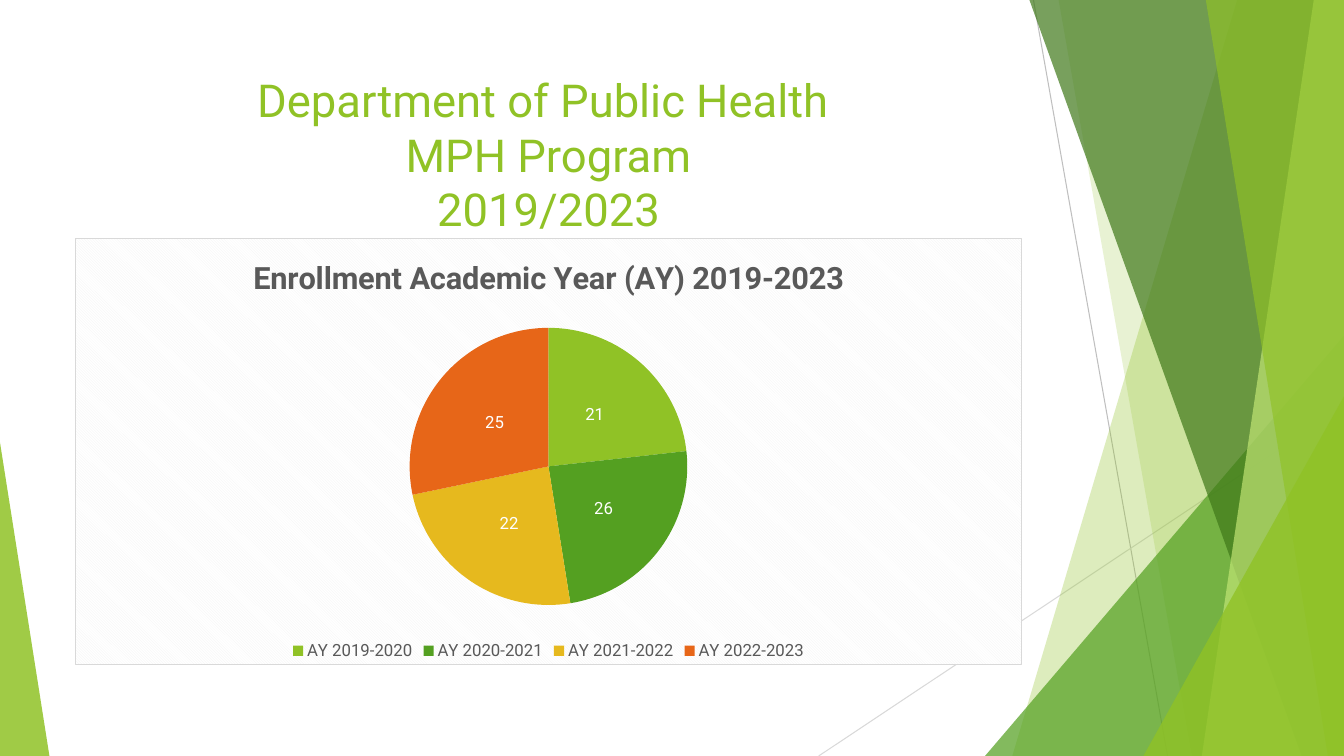
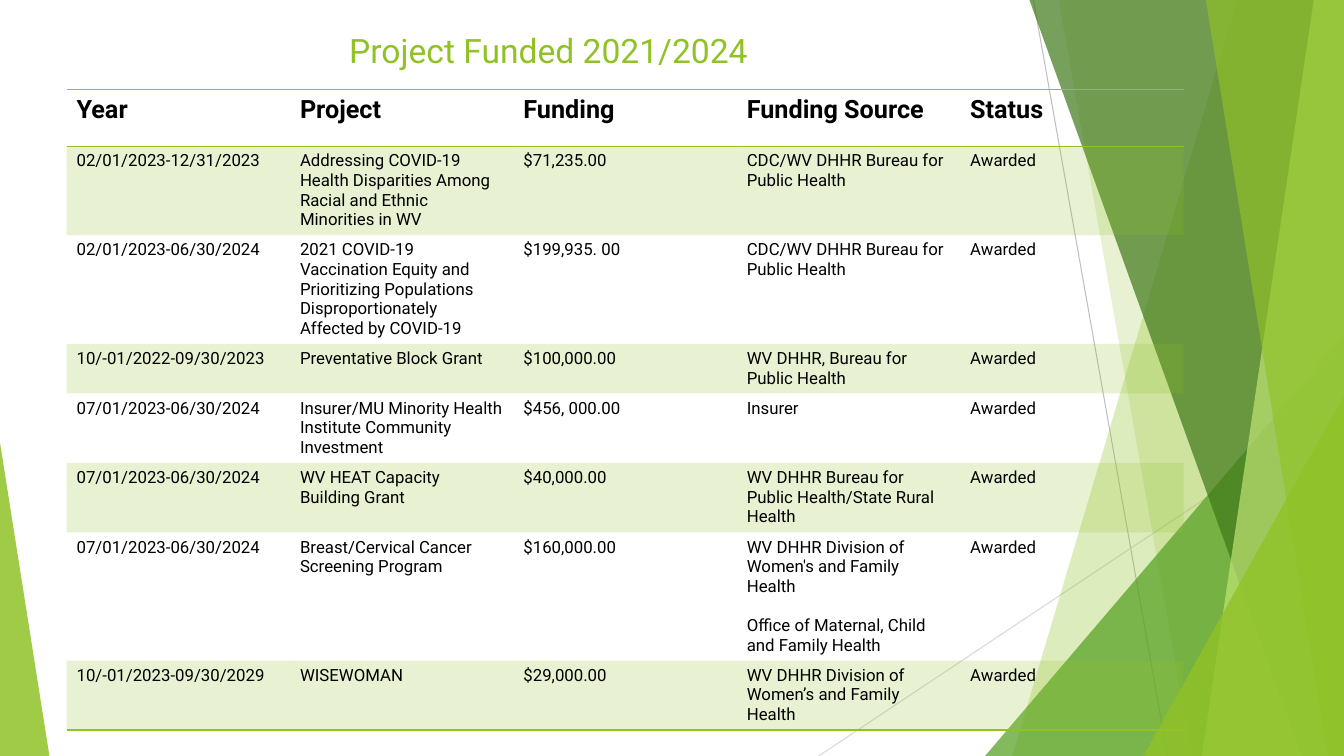
import lxml.etree
import pptx
import pptx.chart.data
import pptx.dml.color
import pptx.enum.chart
import pptx.enum.shapes
import pptx.enum.text
import pptx.oxml
import pptx.oxml.ns
import pptx.util

Inches = pptx.util.Inches
Pt = pptx.util.Pt
RGBColor = pptx.dml.color.RGBColor
qn = pptx.oxml.ns.qn

LIME = RGBColor(0x90, 0xC2, 0x26)
GREEN = RGBColor(0x54, 0xA0, 0x21)
FOREST = RGBColor(0x3F, 0x78, 0x19)
PALE_LIME = RGBColor(0xC0, 0xE4, 0x74)
GOLD = RGBColor(0xE6, 0xB9, 0x1E)
ORANGE = RGBColor(0xE7, 0x66, 0x18)
GRAY = RGBColor(0x59, 0x59, 0x59)
SILVER = RGBColor(0xBF, 0xBF, 0xBF)
LIGHT_GRAY = RGBColor(0xD9, 0xD9, 0xD9)
BLACK = RGBColor(0x00, 0x00, 0x00)
WHITE = RGBColor(0xFF, 0xFF, 0xFF)
FONT = "Roboto"
WIDTH, HEIGHT = 13.33, 7.5


def set_opacity(element, percent):
    """Give every RGB colour inside the element the same opacity."""
    for colour in element.iter(qn("a:srgbClr")):
        alpha = lxml.etree.SubElement(colour, qn("a:alpha"))
        alpha.set("val", str(percent * 1000))


def style_font(font, **values):
    """Apply the deck font and the given size, bold and color."""
    font.name = FONT
    color = values.pop("color")
    for name, value in values.items():
        setattr(font, name, value)
    font.color.rgb = color


deck = pptx.Presentation()
deck.slide_width, deck.slide_height = Inches(WIDTH), Inches(HEIGHT)
layout = deck.slide_layouts.get_by_name("Title Only")
for placeholder in list(layout.placeholders):
    if placeholder.placeholder_format.idx != 0:
        placeholder.element.getparent().remove(placeholder.element)

# Titles: text, top, height, size
TITLES = [
    ("Department of Public Health \vMPH Program\v2019/2023", 0.67, 1.58, 32.4),
    ("Project Funded 2021/2024", 0.25, 0.92, 24),
]
pages = []
for text, top, height, size in TITLES:
    page = deck.slides.add_slide(layout)
    title = page.shapes.title
    title.left, title.top = Inches(0.74), Inches(top)
    title.width, title.height = Inches(9.4), Inches(height)
    frame = title.text_frame
    frame.text = text
    frame.word_wrap = True
    frame.auto_size = pptx.enum.text.MSO_AUTO_SIZE.NONE
    frame.vertical_anchor = pptx.enum.text.MSO_ANCHOR.TOP
    para = frame.paragraphs[0]
    para.alignment = pptx.enum.text.PP_ALIGN.CENTER
    for span in para.runs:
        style_font(span.font, size=Pt(size), color=LIME)
    pages.append(page)
chart_page, table_page = pages

# Background facets are built on a page, then moved to the shared layout
RAYS = [
    ((10.25, 0), (11.58, HEIGHT), SILVER),
    ((WIDTH, 4.03), (8.12, HEIGHT), LIGHT_GRAY),
]
# Outline is (top x, bottom x) of a panel reaching the right edge,
# or (left, top, width, apex) of a triangle standing on the bottom edge
FACETS = [
    ((12.27, 10.04), LIME, 30),
    ((10.5, 11.82), LIME, 20),
    ((9.77, 3.33, 3.56, 1), GREEN, 72),
    ((10.21, 12.91), FOREST, 70),
    ((13.03, 11.92), PALE_LIME, 70),
    ((11.96, 13.17), LIME, 65),
    ((11.34, 3.93, 1.99, 1), LIME, 80),
    ((0, 4.39, 0.49, 0), LIME, 85),
]
decorations = []
for start, end, color in RAYS:
    ray = chart_page.shapes.add_connector(
        pptx.enum.shapes.MSO_CONNECTOR.STRAIGHT,
        *[Inches(value) for value in start + end])
    ray.line.color.rgb = color
    ray.line.width = Pt(0.75)
    lxml.etree.SubElement(ray.element.spPr, qn("a:effectLst"))
    decorations.append(ray)
for outline, color, opacity in FACETS:
    if len(outline) == 2:
        top_x, bottom_x = outline
        corners = [(WIDTH, 0), (WIDTH, HEIGHT), (bottom_x, HEIGHT)]
        builder = chart_page.shapes.build_freeform(Inches(top_x), 0)
        builder.add_line_segments([(Inches(x), Inches(y)) for x, y in corners])
        facet = builder.convert_to_shape()
    else:
        left, top, width, apex = outline
        facet = chart_page.shapes.add_shape(
            pptx.enum.shapes.MSO_SHAPE.ISOSCELES_TRIANGLE,
            Inches(left), Inches(top), Inches(width), Inches(HEIGHT - top))
        facet.adjustments[0] = apex
    facet.fill.solid()
    facet.fill.fore_color.rgb = color
    set_opacity(facet.element.spPr, opacity)
    facet.line.fill.background()
    facet.shadow.inherit = False
    decorations.append(facet)
for decoration in decorations:
    layout.shapes.element.append(decoration.element)

# Enrollment chart
CHART_TITLE = "Enrollment Academic Year (AY) 2019-2023"
SLICES = [
    ("AY 2019-2020", 23, "21", LIME),
    ("AY 2020-2021", 24, "26", GREEN),
    ("AY 2021-2022", 24, "22", GOLD),
    ("AY 2022-2023", 28, "25", ORANGE),
]
data = pptx.chart.data.CategoryChartData()
data.categories = [entry[0] for entry in SLICES]
data.add_series(CHART_TITLE, [entry[1] for entry in SLICES])
chart = chart_page.shapes.add_chart(
    pptx.enum.chart.XL_CHART_TYPE.PIE,
    Inches(0.74), Inches(2.36), Inches(9.4), Inches(4.24), data).chart
style_font(chart.font, size=Pt(10), color=BLACK)
chart.has_title = True
chart.chart_title.text_frame.text = CHART_TITLE
style_font(chart.chart_title.text_frame.paragraphs[0].runs[0].font,
           size=Pt(22), bold=True, color=GRAY)
chart.has_legend = True
chart.legend.position = pptx.enum.chart.XL_LEGEND_POSITION.BOTTOM
chart.legend.include_in_layout = False
style_font(chart.legend.font, size=Pt(12), color=GRAY)

pie = chart.plots[0]
pie.vary_by_categories = True
for index, (year, share, label, color) in enumerate(SLICES):
    point = pie.series[0].points[index]
    point.format.fill.solid()
    point.format.fill.fore_color.rgb = color
    point.format.line.fill.background()
    frame = point.data_label.text_frame
    frame.text = label
    style_font(frame.paragraphs[0].runs[0].font,
               size=Pt(12), bold=False, color=WHITE)
    point.data_label.position = pptx.enum.chart.XL_LABEL_POSITION.CENTER

NAMESPACES = pptx.oxml.ns.nsdecls("c", "a")
plot_area = chart.element.find(".//" + qn("c:plotArea"))
for old_layout in plot_area.findall(qn("c:layout")):
    plot_area.remove(old_layout)
plot_area.insert(0, pptx.oxml.parse_xml(
    f'<c:layout {NAMESPACES}><c:manualLayout><c:layoutTarget val="inner"/>'
    '<c:xMode val="edge"/><c:yMode val="edge"/><c:x val="0.35"/>'
    '<c:y val="0.21"/><c:w val="0.3"/><c:h val="0.65"/>'
    '</c:manualLayout></c:layout>'))
chart.element.find(qn("c:chart")).addnext(pptx.oxml.parse_xml(
    f'<c:spPr {NAMESPACES}><a:pattFill prst="dkDnDiag">'
    '<a:fgClr><a:srgbClr val="F2F2F2"/></a:fgClr>'
    '<a:bgClr><a:srgbClr val="FFFFFF"/></a:bgClr></a:pattFill>'
    f'<a:ln w="{Pt(0.75)}"><a:solidFill><a:srgbClr val="{LIGHT_GRAY}"/>'
    '</a:solidFill></a:ln></c:spPr>'))

# Funding table
HEADINGS = ["Year", "Project", "Funding", "Funding Source", "Status"]
PROJECTS = [
    ("02/01/2023-12/31/2023",
     "Addressing COVID-19 Health Disparities Among Racial and Ethnic "
     "Minorities in WV",
     "$71,235.00", "CDC/WV DHHR Bureau for Public Health"),
    ("02/01/2023-06/30/2024",
     "2021 COVID-19 Vaccination Equity and Prioritizing Populations "
     "Disproportionately Affected by COVID-19",
     "$199,935. 00", "CDC/WV DHHR Bureau for Public Health"),
    ("10/-01/2022-09/30/2023", "Preventative Block Grant",
     "$100,000.00", "WV DHHR, Bureau for Public Health"),
    ("07/01/2023-06/30/2024",
     "Insurer/MU Minority Health Institute Community Investment",
     "$456, 000.00", "Insurer"),
    ("07/01/2023-06/30/2024", "WV HEAT Capacity Building Grant",
     "$40,000.00", "WV DHHR Bureau for Public Health/State Rural Health"),
    ("07/01/2023-06/30/2024", "Breast/Cervical Cancer Screening Program",
     "$160,000.00",
     "WV DHHR Division of Women's and Family Health\n"
     "Office of Maternal, Child and Family Health"),
    ("10/-01/2023-09/30/2029", "WISEWOMAN",
     "$29,000.00", "WV DHHR Division of Women’s and Family Health"),
]
ROW_HEIGHTS = [0.56, 0.88, 1.08, 0.49, 0.69, 0.69, 1.27, 0.69]
NO_STYLE = "{2D5ABB26-0587-4C30-8999-92F81FD0307C}"
rows = [HEADINGS] + [[*project, "Awarded"] for project in PROJECTS]
table = table_page.shapes.add_table(
    len(rows), len(HEADINGS), Inches(0.66), Inches(0.89),
    Inches(11.08), Inches(sum(ROW_HEIGHTS))).table
table.horz_banding = False
table._tbl.tblPr.find(qn("a:tableStyleId")).text = NO_STYLE
for row_index, values in enumerate(rows):
    table.rows[row_index].height = Inches(ROW_HEIGHTS[row_index])
    heading = row_index == 0
    edges = {0: ["lnT", "lnB"], len(rows) - 1: ["lnB"]}.get(row_index, [])
    for column_index, value in enumerate(values):
        cell = table.cell(row_index, column_index)
        if row_index % 2:
            cell.fill.solid()
            cell.fill.fore_color.rgb = LIME
            set_opacity(cell._tc.tcPr, 20)
        else:
            cell.fill.background()
        for position, edge in enumerate(edges):
            cell._tc.tcPr.insert(position, pptx.oxml.parse_xml(
                f'<a:{edge} {NAMESPACES} w="{Pt(1)}"><a:solidFill>'
                f'<a:srgbClr val="{LIME}"/></a:solidFill></a:{edge}>'))
        cell.text_frame.text = value
        for para_index, para in enumerate(cell.text_frame.paragraphs):
            if para_index:
                para.space_before = Pt(14)
            style_font(para.runs[0].font, size=Pt(18 if heading else 12),
                       bold=heading, color=BLACK)

deck.save("out.pptx")
